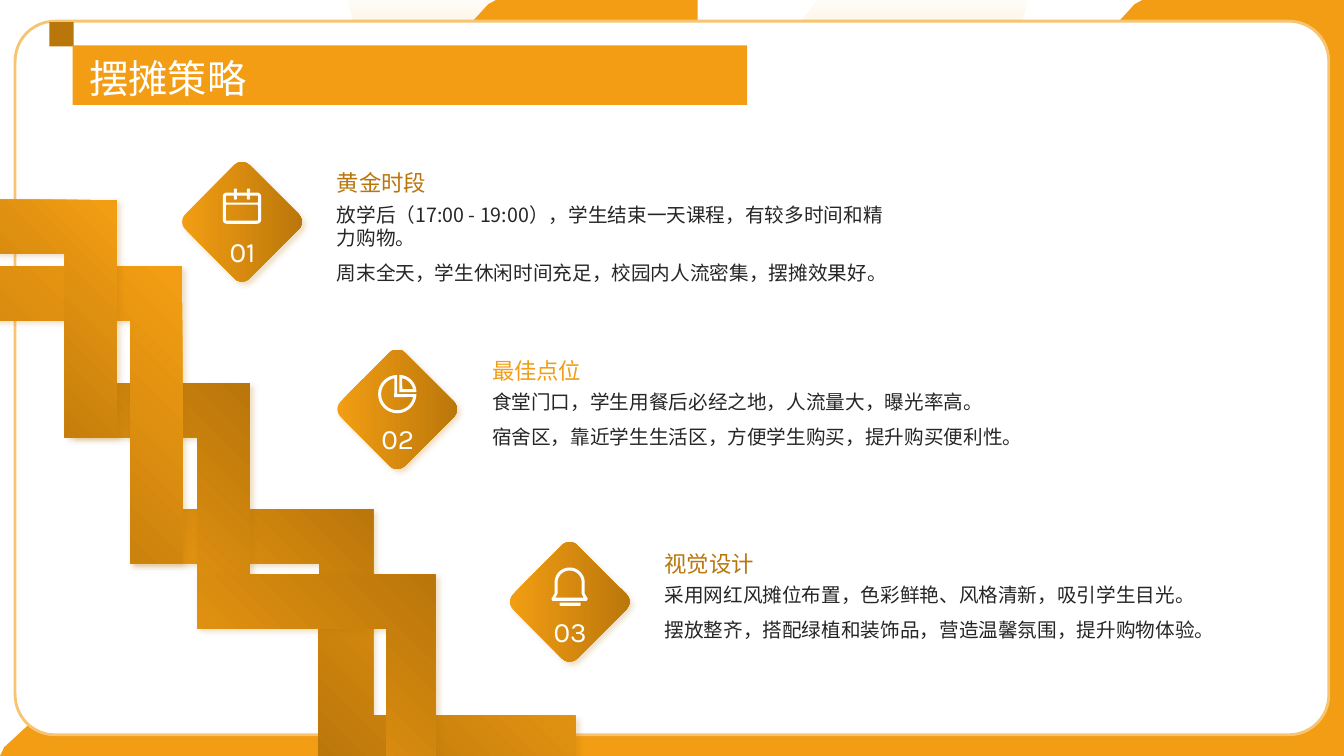
from math import cos, radians, sin

from lxml import etree
from pptx import Presentation
from pptx import util as u
from pptx.dml.color import RGBColor
from pptx.enum import shapes, text
from pptx.oxml.ns import qn

HUES = {"orange": "F29D13", "brown": "B9760A", "shade": "BA770A", "cream": "FCEBD0",
        "edge": "F7C471", "ink": "262626", "white": "FFFFFF"}
SANS, DIGIT = "Noto Sans CJK SC", "Karla"
KIND = shapes.MSO_SHAPE


def hue(name):
    return RGBColor.from_string(HUES[name])


def arc(x, y, size, start, end, steps=24):
    """Points on a circle, angles in degrees clockwise from the right."""
    turns = [radians(start + (end - start) * i / steps) for i in range(steps + 1)]
    return [(x + size * cos(t), y + size * sin(t)) for t in turns]


def pill(left, top, right, base, bend):
    """Outline of a rectangle with round corners."""
    hubs = [(right - bend, base - bend), (left + bend, base - bend),
            (left + bend, top + bend), (right - bend, top + bend)]
    return [dot for i, (x, y) in enumerate(hubs)
            for dot in arc(x, y, bend, 90 * i, 90 * i + 90, 6)]


def paint(shape, fill):
    shape.shadow.inherit = False
    shape.fill.solid()
    shape.fill.fore_color.rgb = hue(fill)
    shape.line.fill.background()
    return shape


def blend(shape, first, last, angle, start=0, alpha=None):
    """Linear gradient; the angle runs counter-clockwise."""
    shape.fill.gradient()
    shape.fill.gradient_angle = angle
    stops = shape.fill.gradient_stops
    for stop, name, place in zip(stops, (first, last), (start, 1)):
        stop.color.rgb = hue(name)
        stop.position = place
    if alpha is not None:
        tint = list(shape.element.spPr.iter(qn("a:srgbClr")))[1]
        etree.SubElement(tint, qn("a:alpha"), val=str(alpha * 1000))


def gild(shape, angle):
    """Orange to brown gradient with a soft shadow."""
    blend(shape, "orange", "brown", angle, 0.04)
    glow = shape.element.spPr.find(qn("a:effectLst"))
    drop = etree.SubElement(glow, qn("a:outerShdw"), blurRad=str(u.Pt(4)), dist=str(u.Pt(3)),
                            dir="2700000", algn="tl", rotWithShape="0")
    tint = etree.SubElement(drop, qn("a:srgbClr"), val=HUES["shade"])
    etree.SubElement(tint, qn("a:alpha"), val="23000")


def trace(slide, rings, fill="orange"):
    """One freeform; rings inside others become holes."""
    rings = [[(u.Inches(x), u.Inches(y)) for x, y in ring] for ring in rings]
    pen = slide.shapes.build_freeform(*rings[0][0])
    for i, ring in enumerate(rings):
        if i:
            pen.move_to(*ring[0])
        pen.add_line_segments(ring[1:], close=True)
    return paint(pen.convert_to_shape(), fill)


def block(slide, kind, box, fill):
    return paint(slide.shapes.add_shape(kind, *map(u.Inches, box)), fill)


def write(slide, box, lines, size, tone, font=SANS, gaps=(1.5,), mid=False, center=False):
    frame = slide.shapes.add_textbox(*map(u.Inches, box)).text_frame
    frame.word_wrap = True
    frame.margin_left = frame.margin_right = frame.margin_top = frame.margin_bottom = 0
    frame.vertical_anchor = text.MSO_ANCHOR.MIDDLE if mid else text.MSO_ANCHOR.TOP
    frame.text = "\n".join(lines)
    for para, gap in zip(frame.paragraphs, gaps):
        para.line_spacing = gap
        para.alignment = text.PP_ALIGN.CENTER if center else text.PP_ALIGN.LEFT
        for run in para.runs:
            run.font.size = u.Pt(size)
            run.font.name = font
            run.font.color.rgb = hue(tone)
            etree.SubElement(run.font._element, qn("a:ea"), typeface=font)


def wave(slide, left):
    """Orange floor and side of one backdrop unit."""
    floor = arc(3.75, 11.2, 5.3, 225.6, 306.2) + [(6.92, 6.97), (6.92, 7.5), (0, 7.5)]
    side = [(4.92, 0), (6.92, 0), (6.92, 7.5), (4.92, 7.5)]
    side += arc(8.63, 3.75, 5.3, 135.6, 224.4)
    for ring in (floor, side):
        trace(slide, [[(x + left, y) for x, y in ring]])


def back(slide):
    cup = arc(6.82, -0.74, 3.45, 16.5, 163.5) + [(3.44, 0), (5.53, 0)]
    cup += arc(6.82, -0.74, 1.47, 146.6, 33.4) + [(8.11, 0), (10.19, 0)]
    arch = arc(6.82, 7.5, 3.45, 180, 360) + arc(6.82, 7.5, 1.47, 360, 180)
    blend(trace(slide, [cup]), "cream", "orange", 90, alpha=2)
    wave(slide, 0)
    blend(trace(slide, [arch]), "cream", "orange", 270, alpha=0)
    wave(slide, 6.41)
    panel = block(slide, KIND.ROUNDED_RECTANGLE, (0.15, 0.21, 13.03, 7.08), "white")
    panel.adjustments[0] = 0.056
    panel.line.color.rgb = hue("edge")
    panel.line.width = u.Pt(2)


def stairs(slide):
    """Folded ribbons; each is (angle, outline)."""
    rise, fall = 45, 225
    folds = [
        (rise, [(1.29, 5.05), (3.7, 5.05), (3.7, 6.17), (3.17, 6.17), (3.17, 5.59), (1.29, 5.59)]),
        (rise, [(0.71, 3.8), (2.48, 3.8), (2.48, 6.16), (1.96, 6.16), (1.96, 4.34), (0.71, 4.34)]),
        (fall, [(-0.12, 2.64), (1.81, 2.64), (1.81, 5.59), (1.29, 5.59), (1.29, 3.18),
                (-0.12, 3.18)]),
        (fall, [(-0.05, 1.98), (1.16, 1.98), (1.16, 4.34), (0.64, 4.34), (0.64, 2.52),
                (-0.05, 2.52)]),
        (fall, [(5.71, 7.64), (3.16, 7.64), (3.16, 5.71), (3.7, 5.71), (3.7, 7.1), (5.71, 7.1)]),
        (rise, [(1.96, 5.7), (4.32, 5.7), (4.32, 7.63), (3.83, 7.63), (3.83, 6.24), (1.96, 6.24)]),
    ]
    for angle, ring in folds:
        gild(trace(slide, [ring]), angle)


def date():
    pins = [pill(x, y, x + 0.03, y + 0.04, 0.01) for x in (2.32, 2.45) for y in (1.87, 1.94)]
    return [pill(2.21, 1.91, 2.59, 2.22, 0.04), pill(2.24, 1.94, 2.56, 2.01, 0.01),
            pill(2.24, 2.03, 2.56, 2.19, 0.01)] + pins


def pie():
    return [arc(3.94, 3.91, 0.19, 0, 270) + [(3.94, 3.91)],
            arc(3.94, 3.91, 0.16, 10, 260) + [(3.91, 3.94)],
            arc(3.96, 3.89, 0.17, 270, 360) + [(3.96, 3.89)],
            arc(3.96, 3.89, 0.14, 282, 348) + [(3.99, 3.86)]]


def bell():
    rim = [(5.8, 5.89), (5.83, 5.94), (5.82, 5.96), (5.48, 5.96), (5.47, 5.94), (5.5, 5.89)]
    core = [(5.77, 5.89), (5.79, 5.93), (5.51, 5.93), (5.53, 5.89)]
    return [arc(5.65, 5.78, 0.15, 180, 360) + rim, arc(5.65, 5.78, 0.12, 180, 360) + core,
            pill(5.55, 5.98, 5.76, 6.01, 0.01)]


def item(slide, left, top, label, icon, tone, head, lines):
    gem = block(slide, KIND.ROUNDED_RECTANGLE, (left, top, 0.9, 0.9), "orange")
    gem.adjustments[0] = 0.117
    gem.rotation = 315
    gild(gem, 315)
    write(slide, (left + 0.21, top + 0.37, 0.49, 0.57), [label], 20, "white", DIGIT,
          mid=True, center=True)
    trace(slide, icon, "white")
    write(slide, (left + 1.39, top + 0.26, 5.61, 0.9), lines, 14, "ink", gaps=(1.0, 1.5))
    write(slide, (left + 1.39, top - 0.2, 5.61, 0.54), [head], 16, tone)


def main():
    deck = Presentation()
    deck.slide_width, deck.slide_height = u.Inches(13.33), u.Inches(7.5)
    slide = deck.slides.add_slide(deck.slide_layouts[6])
    back(slide)
    item(slide, 1.95, 1.75, "01", date(), "brown", "黄金时段",
         ["放学后（17:00 - 19:00），学生结束一天课程，有较多时间和精力购物。",
          "周末全天，学生休闲时间充足，校园内人流密集，摆摊效果好。"])
    item(slide, 3.49, 3.61, "02", pie(), "orange", "最佳点位",
         ["食堂门口，学生用餐后必经之地，人流量大，曝光率高。",
          "宿舍区，靠近学生生活区，方便学生购买，提升购买便利性。"])
    item(slide, 5.2, 5.52, "03", bell(), "brown", "视觉设计",
         ["采用网红风摊位布置，色彩鲜艳、风格清新，吸引学生目光。",
          "摆放整齐，搭配绿植和装饰品，营造温馨氛围，提升购物体验。"])
    stairs(slide)
    block(slide, KIND.RECTANGLE, (0.49, 0.22, 0.24, 0.24), "brown")
    block(slide, KIND.RECTANGLE, (0.72, 0.45, 6.69, 0.59), "orange")
    write(slide, (0.89, 0.49, 11.7, 0.51), ["摆摊策略"], 28, "white", gaps=(1.1,), mid=True)
    deck.save("out.pptx")


if __name__ == "__main__":
    main()
